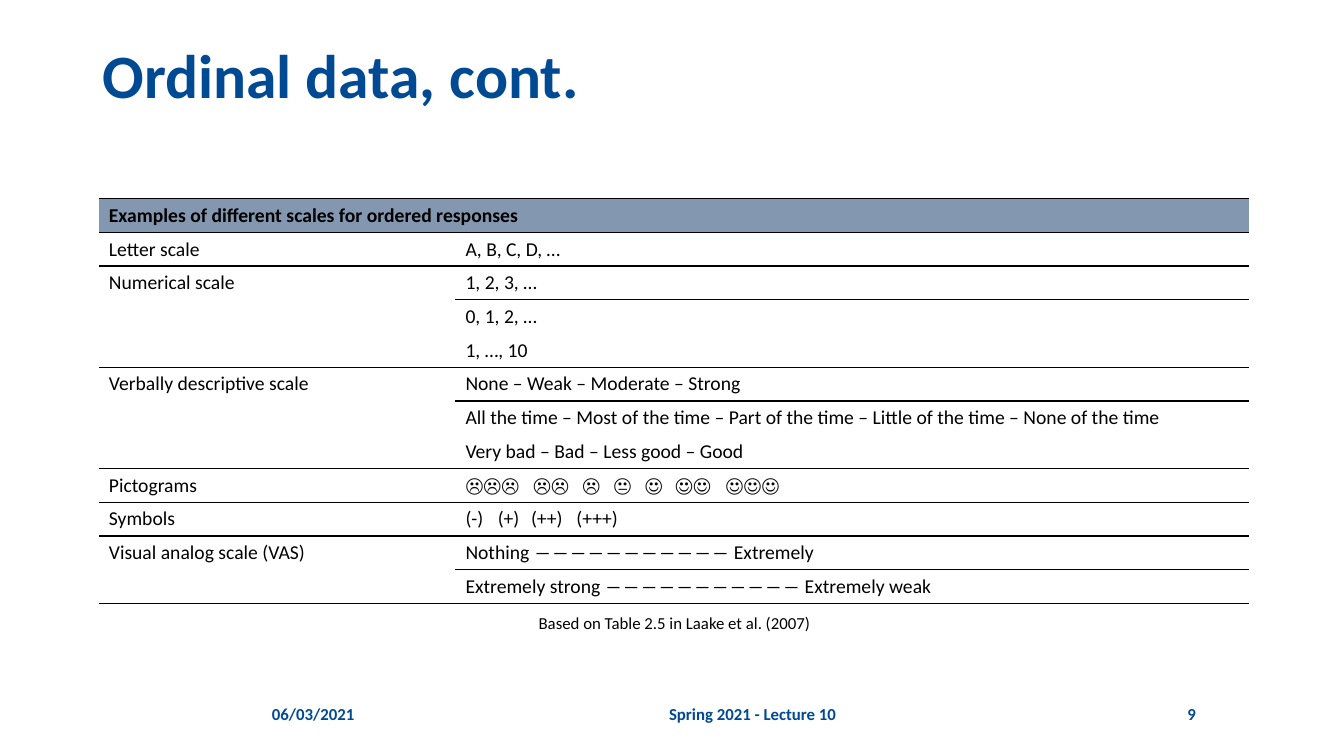
from lxml import etree
from pptx import Presentation
from pptx import util as u
from pptx.dml.color import RGBColor
from pptx.enum import text
from pptx.oxml.ns import qn

BLUE = RGBColor(0x00, 0x4A, 0x93)
BLACK = RGBColor(0x00, 0x00, 0x00)
SLATE = RGBColor(0x84, 0x97, 0xB0)

HEADING = "Examples of different scales for ordered responses"
SCALES = [
    ("Letter scale", ["A, B, C, D, …"]),
    ("Numerical scale", ["1, 2, 3, …", "0, 1, 2, …", "1, …, 10"]),
    ("Verbally descriptive scale", [
        "None – Weak – Moderate – Strong",
        "All the time – Most of the time – Part of the time"
        " – Little of the time – None of the time",
        "Very bad – Bad – Less good – Good",
    ]),
    ("Pictograms", ["☹☹☹\t☹☹\t☹\t😐\t☺\t☺☺\t☺☺☺"]),
    ("Symbols", ["(-)\t(+)\t(++)\t(+++)"]),
    ("Visual analog scale (VAS)", [
        "Nothing ――――――――――― Extremely",
        "Extremely strong ――――――――――― Extremely weak",
    ]),
]
# Tab stops in inches, by row label
TAB_STOPS = {
    "Pictograms": [0.67, 1.16, 1.47, 1.78, 2.08, 2.58],
    "Symbols": [0.32, 0.65, 1.1],
}


class LecturePage:
    """Holds the style and the slide; lengths are percent of the slide's size."""

    font_name = "Calibri"

    def __init__(self, deck):
        self.deck = deck
        self.page = deck.slides.add_slide(deck.slide_layouts[6])

    def across(self, percent):
        return round(self.deck.slide_width * percent / 100)

    def down(self, percent):
        return round(self.deck.slide_height * percent / 100)

    def area(self, left, top, width, height):
        return self.across(left), self.down(top), self.across(width), self.down(height)

    def style(self, para, size, color, bold=False):
        para.font.name = self.font_name
        para.font.size = u.Pt(size)
        para.font.bold = bold
        para.font.color.rgb = color

    def add_text(self, words, area, size, color=BLUE, bold=True,
                 align=text.PP_ALIGN.LEFT, anchor=text.MSO_ANCHOR.MIDDLE, wrap=True):
        frame = self.page.shapes.add_textbox(*self.area(*area)).text_frame
        frame.word_wrap = wrap
        frame.vertical_anchor = anchor
        para = frame.paragraphs[0]
        para.text = words
        para.alignment = align
        self.style(para, size, color, bold)
        return para

    def add_borders(self, cell, above, below):
        properties = cell._tc.get_or_add_tcPr()
        for side, shown in (("L", False), ("R", False), ("T", above), ("B", below)):
            line = etree.SubElement(properties, qn(f"a:ln{side}"), w=str(u.Pt(1)))
            if shown:
                fill = etree.SubElement(line, qn("a:solidFill"))
                etree.SubElement(fill, qn("a:srgbClr"), val=str(BLACK))
            else:
                etree.SubElement(line, qn("a:noFill"))

    def fill_cell(self, cell, words, above, below, bold=False, fill=None, stops=()):
        self.add_borders(cell, above, below)
        if fill is None:
            cell.fill.background()
        else:
            cell.fill.solid()
            cell.fill.fore_color.rgb = fill
        cell.vertical_anchor = text.MSO_ANCHOR.MIDDLE
        para = cell.text_frame.paragraphs[0]
        para.text = words
        if stops:
            tabs = etree.SubElement(para._p.get_or_add_pPr(), qn("a:tabLst"))
            for stop in stops:
                etree.SubElement(tabs, qn("a:tab"), pos=str(u.Inches(stop)), algn="l")
        self.style(para, 14, BLACK, bold)

    def add_scales(self, heading, scales, area, label_share):
        # One row per response; a label stands only in the first row of its group
        rows = [(label if place == 0 else "", response, place, TAB_STOPS.get(label, ()))
                for label, responses in scales
                for place, response in enumerate(responses)]
        left, top, width, height = self.area(*area)
        table = self.page.shapes.add_table(
            len(rows) + 1, 2, left, top, width, height).table
        table.horz_banding = False
        table.columns[0].width = round(width * label_share)
        table.columns[1].width = width - table.columns[0].width

        # Heading row
        for column, words in enumerate((heading, "")):
            self.fill_cell(table.cell(0, column), words, True, True, True, SLATE)
        table.cell(0, 0).merge(table.cell(0, 1))

        # Lines: labels are ruled by group, responses above all but a third one
        ruled = [(place == 0, place < 2) for _, _, place, _ in rows] + [(True, True)]
        for index, (label, response, _, stops) in enumerate(rows):
            above, below = ruled[index], ruled[index + 1]
            self.fill_cell(table.cell(index + 1, 0), label, above[0], below[0])
            self.fill_cell(table.cell(index + 1, 1), response, above[1], below[1],
                           stops=stops)


def main():
    deck = Presentation()
    deck.slide_width, deck.slide_height = u.Inches(13.33), u.Inches(7.5)
    lecture = LecturePage(deck)

    # Title
    title = lecture.add_text("Ordinal data, cont.", (6.9, 5.33, 86.27, 19.33), 44,
                             anchor=text.MSO_ANCHOR.TOP)
    title.line_spacing = 0.9

    # Table and its source
    lecture.add_scales(HEADING, SCALES, (7.35, 26.27, 85.6, 53.6), 0.31)
    lecture.add_text("Based on Table 2.5 in Laake et al. (2007)",
                     (36.91, 79.73, 26.56, 5.2), 12, BLACK, False,
                     text.PP_ALIGN.CENTER, wrap=False)

    # Footer
    for words, left, width, align in (
        ("06/03/2021", 19.5, 9.83, text.PP_ALIGN.LEFT),
        ("Spring 2021 - Lecture 10", 30.53, 50.94, text.PP_ALIGN.CENTER),
        ("9", 82.67, 7.05, text.PP_ALIGN.RIGHT),
    ):
        lecture.add_text(words, (left, 91.73, width, 5.33), 12, align=align)

    deck.save("out.pptx")


if __name__ == "__main__":
    main()
